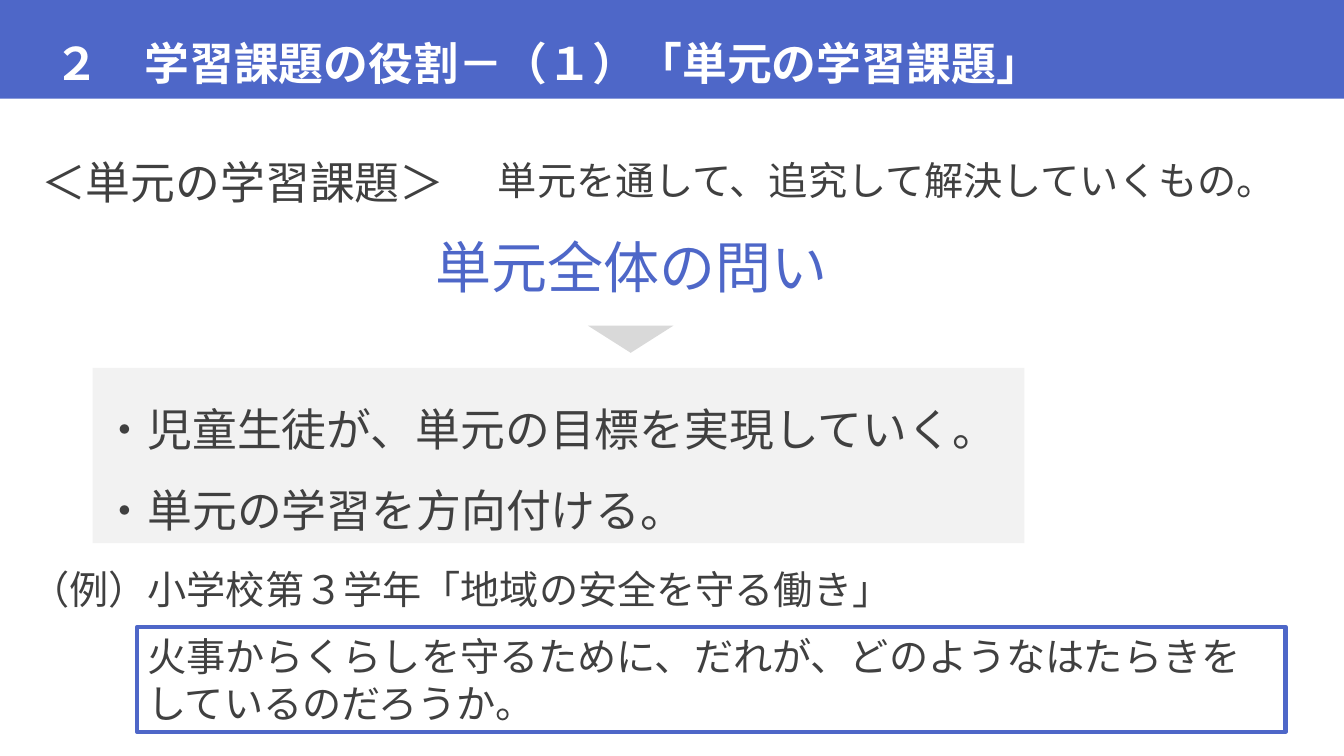
from dataclasses import dataclass

from lxml import etree
from pptx import Presentation
from pptx.dml.color import RGBColor
from pptx.enum.shapes import MSO_SHAPE
from pptx.enum.text import MSO_ANCHOR, MSO_AUTO_SIZE, PP_ALIGN
from pptx.oxml.ns import qn
from pptx.util import Emu, Pt

RECTANGLE = MSO_SHAPE.RECTANGLE
TRIANGLE = MSO_SHAPE.ISOSCELES_TRIANGLE
TOP, MIDDLE = MSO_ANCHOR.TOP, MSO_ANCHOR.MIDDLE
LEFT, CENTER = PP_ALIGN.LEFT, PP_ALIGN.CENTER
FIXED, GROW = MSO_AUTO_SIZE.NONE, MSO_AUTO_SIZE.SHAPE_TO_FIT_TEXT
EMU_PER_PX = 9144
BLANK_LAYOUT = 6


@dataclass(frozen=True)
class Theme:
    font: str = "Noto Sans CJK JP"
    accent: str = "4E67C8"
    body: str = "404040"
    white: str = "FFFFFF"
    panel: str = "F2F2F2"
    pointer: str = "D9D9D9"
    question_size: int = 40
    heading_size: int = 32
    detail_size: int = 28
    border_width: int = 3
    loose_spacing: float = 1.5


THEME = Theme()


def px(length):
    return Emu(length * EMU_PER_PX)


def add_block(slide, box, fill, border=None, preset=RECTANGLE):
    shape = slide.shapes.add_shape(preset, *map(px, box))
    shape.shadow.inherit = False
    shape.fill.solid()
    shape.fill.fore_color.rgb = RGBColor.from_string(fill)
    if border:
        shape.line.color.rgb = RGBColor.from_string(border)
        shape.line.width = Pt(THEME.border_width)
    else:
        shape.line.fill.background()
    return shape


def add_label(slide, box, lines, **text_format):
    write_text(slide.shapes.add_textbox(*map(px, box)), lines, **text_format)


def write_text(shape, lines, size=THEME.detail_size, color=THEME.body, bold=False,
               anchor=MIDDLE, align=LEFT, spacing=1.0, wrap=True, auto_size=FIXED):
    frame = shape.text_frame
    frame_format = {"word_wrap": wrap, "auto_size": auto_size, "vertical_anchor": anchor}
    for name, value in frame_format.items():
        setattr(frame, name, value)
    frame.text = "\n".join(lines)
    for paragraph in frame.paragraphs:
        paragraph.alignment = align
        paragraph.line_spacing = spacing
        for run in paragraph.runs:
            style_font(run.font, size, color, bold)
            east_asian = etree.SubElement(run._r.get_or_add_rPr(), qn("a:ea"))
            east_asian.set("typeface", THEME.font)


def style_font(font, size, color, bold):
    font.color.rgb = RGBColor.from_string(color)
    for name, value in {"name": THEME.font, "size": Pt(size), "bold": bold}.items():
        setattr(font, name, value)


def main():
    presentation = Presentation()
    presentation.slide_width = px(1333)
    presentation.slide_height = px(750)
    slide = presentation.slides.add_slide(presentation.slide_layouts[BLANK_LAYOUT])

    heading = {"size": THEME.heading_size, "spacing": THEME.loose_spacing}

    roles = add_block(slide, (92, 365, 924, 174), THEME.panel)
    write_text(roles, ["・児童生徒が、単元の目標を実現していく。",
                       "・単元の学習を方向付ける。"], **heading)

    add_label(slide, (422, 226, 413, 77), ["単元全体の問い"], size=THEME.question_size,
              color=THEME.accent, anchor=TOP, wrap=False, auto_size=GROW)

    pointer = add_block(slide, (583, 323, 85, 27), THEME.pointer, preset=TRIANGLE)
    pointer.rotation = 180

    title_bar = add_block(slide, (0, 0, 1333, 98), THEME.accent)
    write_text(title_bar, ["　２　学習課題の役割－（１）「単元の学習課題」"],
               color=THEME.white, bold=True, **heading)

    example = add_block(slide, (136, 622, 1139, 104), THEME.white, border=THEME.accent)
    write_text(example, ["火事からくらしを守るために、だれが、どのようなはたらきをしているのだろうか。"],
               auto_size=GROW)

    add_label(slide, (20, 556, 925, 57), ["（例）小学校第３学年「地域の安全を守る働き」"],
              anchor=TOP, auto_size=GROW)
    add_label(slide, (452, 125, 855, 84), ["単元を通して、追究して解決していくもの。"],
              align=CENTER, spacing=THEME.loose_spacing)
    add_label(slide, (30, 125, 422, 84), ["＜単元の学習課題＞"], align=CENTER, **heading)

    presentation.save("out.pptx")


if __name__ == "__main__":
    main()
